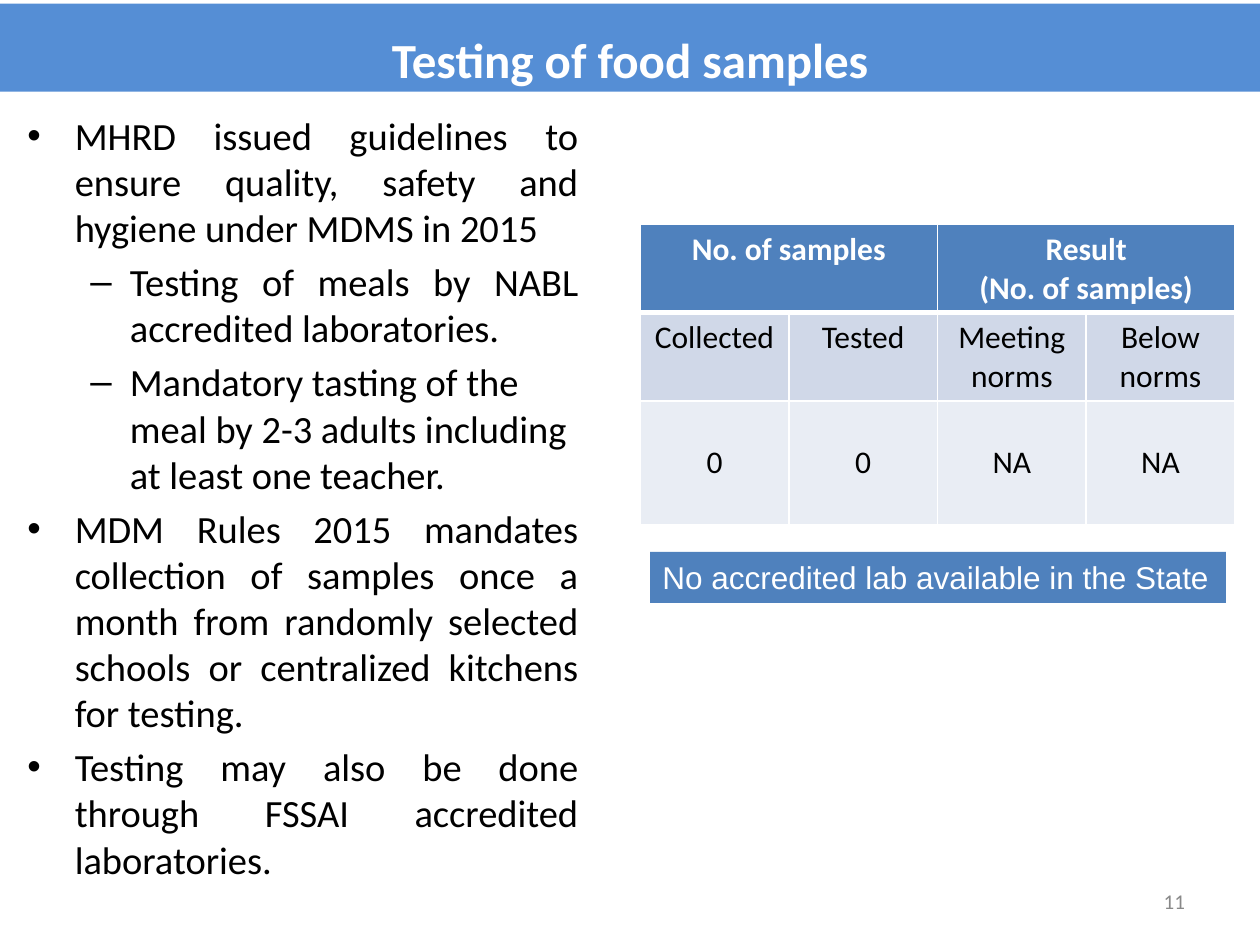
from lxml import etree
from pptx import Presentation
from pptx import util as u
from pptx.dml import color
from pptx.enum import shapes, text
from pptx.oxml import ns

Pt = u.Pt
WHITE = color.RGBColor(0xFF, 0xFF, 0xFF)
BLACK = color.RGBColor(0, 0, 0)
GRAY = color.RGBColor(0x89, 0x89, 0x89)
BANNER = color.RGBColor(0x55, 0x8E, 0xD5)
BLUE = color.RGBColor(0x4F, 0x81, 0xBD)
PALE = color.RGBColor(0xD0, 0xD8, 0xE8)
PALEST = color.RGBColor(0xE9, 0xED, 0xF4)
LEFT, CENTER, RIGHT, JUSTIFY = (
    text.PP_ALIGN.LEFT, text.PP_ALIGN.CENTER, text.PP_ALIGN.RIGHT, text.PP_ALIGN.JUSTIFY)
TOP, MIDDLE = text.MSO_ANCHOR.TOP, text.MSO_ANCHOR.MIDDLE

BULLETS = [
    (0, JUSTIFY, "MHRD issued guidelines to ensure quality, safety and hygiene under MDMS in 2015"),
    (1, JUSTIFY, "Testing of meals by NABL accredited laboratories."),
    (1, LEFT, "Mandatory tasting of the meal by 2-3 adults including at least one teacher."),
    (0, JUSTIFY, "MDM Rules 2015 mandates collection of samples once a month from randomly "
                 "selected schools or centralized kitchens for testing."),
    (0, JUSTIFY, "Testing may also be done through FSSAI accredited laboratories."),
]
LEVELS = [("•", 27, 27), ("–", 58.5, 22.5)]
ROWS = [
    (50.4, BLUE, TOP, ["No. of samples", None, "Result\n(No. of samples)", None]),
    (50.4, PALE, TOP, ["Collected", "Tested", "Meeting norms", "Below norms"]),
    (70.56, PALEST, MIDDLE, ["0", "0", "NA", "NA"]),
]


def format_para(para, size, ink, align=LEFT, bold=False, face="Calibri"):
    para.alignment = align
    para.font.size = Pt(size)
    para.font.name = face
    para.font.bold = bold
    para.font.color.rgb = ink


def fill_solid(shape, paint):
    shape.fill.solid()
    shape.fill.fore_color.rgb = paint


def place(shape, left, top, width, height):
    shape.left, shape.top = Pt(left), Pt(top)
    shape.width, shape.height = Pt(width), Pt(height)


def format_title(page, words):
    title = page.shapes.title
    place(title, 0, 2, 720, 50.4)
    fill_solid(title, BANNER)
    frame = title.text_frame
    frame.text = words
    frame.auto_size = text.MSO_AUTO_SIZE.NONE
    frame.vertical_anchor = MIDDLE
    para = frame.paragraphs[0]
    para.line_spacing = 1.4
    format_para(para, 28, WHITE, CENTER, bold=True)


def set_bullet(para, mark, margin, hang):
    props = para._p.get_or_add_pPr()
    props.set("marL", str(Pt(margin)))
    props.set("indent", str(-Pt(hang)))
    etree.SubElement(props, ns.qn("a:buFont"), typeface="Arial")
    etree.SubElement(props, ns.qn("a:buChar"), char=mark)


def add_bullets(page, items):
    box = page.shapes.add_textbox(Pt(8.64), Pt(60.48), Pt(329), Pt(468.7))
    frame = box.text_frame
    frame.word_wrap = True
    for index, (level, align, words) in enumerate(items):
        para = frame.add_paragraph() if index else frame.paragraphs[0]
        para.text = words
        para.level = level
        para.space_before = Pt(4.4)
        set_bullet(para, *LEVELS[level])
        format_para(para, 22, BLACK, align)


def set_borders(cell, bottom):
    props = cell._tc.get_or_add_tcPr()
    for side, width in (("L", 1), ("R", 1), ("T", 1), ("B", bottom)):
        line = etree.SubElement(props, ns.qn("a:ln" + side), w=str(Pt(width)))
        paint = etree.SubElement(line, ns.qn("a:solidFill"))
        etree.SubElement(paint, ns.qn("a:srgbClr"), val=str(WHITE))


def add_samples_table(page, rows):
    columns = len(rows[0][3])
    frame = page.shapes.add_table(
        len(rows), columns, Pt(365.8), Pt(128.2), Pt(339.84), Pt(171.36))
    table = frame.table
    for row, (height, paint, anchor, entries) in enumerate(rows):
        header = row == 0
        table.rows[row].height = Pt(height)
        for column, words in enumerate(entries):
            cell = table.cell(row, column)
            set_borders(cell, 3 if header else 1)
            fill_solid(cell, paint)
            cell.vertical_anchor = anchor
            if words is None:
                table.cell(row, column - 1).merge(cell)
                continue
            cell.text = words
            for para in cell.text_frame.paragraphs:
                format_para(para, 18, WHITE if header else BLACK, CENTER, bold=header)


def add_note(page, words):
    note = page.shapes.add_shape(
        shapes.MSO_SHAPE.RECTANGLE, Pt(371.5), Pt(315.4), Pt(329), Pt(29.1))
    note.shadow.inherit = False
    fill_solid(note, BLUE)
    note.line.fill.background()
    frame = note.text_frame
    frame.word_wrap = True
    frame.vertical_anchor = TOP
    frame.text = words
    format_para(frame.paragraphs[0], 18, WHITE, face="Arial")


def add_page_number(page, number):
    box = page.shapes.add_textbox(Pt(516.2), Pt(500.4), Pt(168), Pt(28.75))
    frame = box.text_frame
    frame.word_wrap = True
    frame.vertical_anchor = MIDDLE
    frame.text = number
    format_para(frame.paragraphs[0], 12, GRAY, RIGHT)


def main():
    deck = Presentation()
    deck.slide_width, deck.slide_height = Pt(720), Pt(540)
    page = deck.slides.add_slide(deck.slide_layouts.get_by_name("Title Only"))
    format_title(page, "Testing of food samples")
    add_bullets(page, BULLETS)
    add_samples_table(page, ROWS)
    add_note(page, "No accredited lab available in the State")
    add_page_number(page, "11")
    deck.save("out.pptx")


if __name__ == "__main__":
    main()
